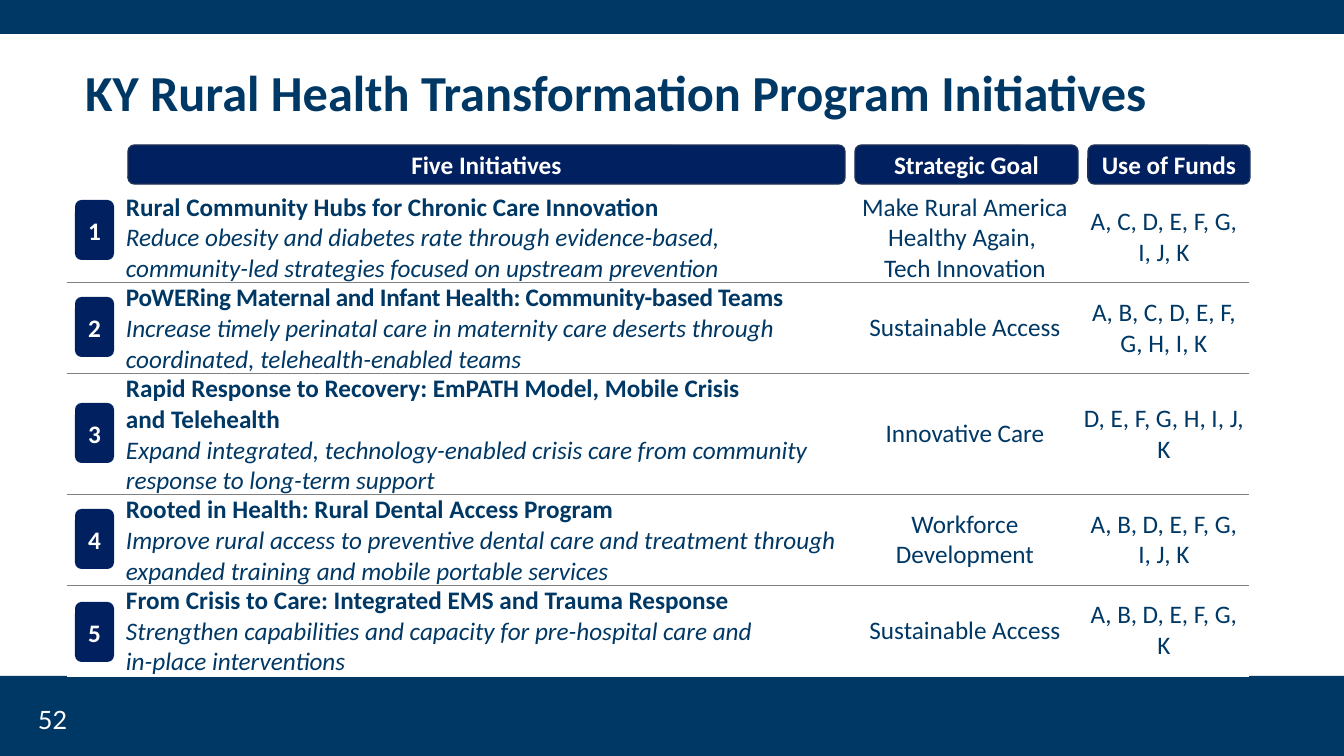
from lxml import etree
from pptx import Presentation
from pptx.dml.color import RGBColor
from pptx.enum.shapes import MSO_SHAPE as Shape
from pptx.enum.text import MSO_ANCHOR as Anchor, MSO_AUTO_SIZE as AutoSize, PP_ALIGN as Align
from pptx.oxml import parse_xml
from pptx.oxml.ns import nsdecls, qn
from pptx.util import Emu, Pt

COLORS = {"band": "003865", "navy": "002060", "edge": "1E3256", "rule": "808080", "white": "FFFFFF"}
NO_STYLE = "{2D5ABB26-0587-4C30-8999-92F81FD0307C}"
COLUMNS = [56, 728, 228, 170]
HEADERS = [("Five Initiatives", 128, 717), ("Strategic Goal", 855, 223), ("Use of Funds", 1088, 162)]
INITIATIVES = [
    ("Rural Community Hubs for Chronic Care Innovation",
     "Reduce obesity and diabetes rate through evidence-based, \ncommunity-led strategies focused on upstream prevention",
     "Make Rural America Healthy Again, \nTech Innovation", "A, C, D, E, F, G, I, J, K", 84, 200),
    ("PoWERing Maternal and Infant Health: Community-based Teams",
     "Increase timely perinatal care in maternity care deserts through coordinated, telehealth-enabled teams",
     "Sustainable Access", "A, B, C, D, E, F, G, H, I, K", 84, 297),
    ("Rapid Response to Recovery: EmPATH Model, Mobile Crisis\nand Telehealth",
     "Expand integrated, technology-enabled crisis care from community response to long-term support",
     "Innovative Care", "D, E, F, G, H, I, J, K", 111, 403),
    ("Rooted in Health: Rural Dental Access Program",
     "Improve rural access to preventive dental care and treatment through expanded training and mobile portable services",
     "Workforce Development", "A, B, D, E, F, G, I, J, K", 84, 509),
    ("From Crisis to Care: Integrated EMS and Trauma Response",
     "Strengthen capabilities and capacity for pre-hospital care and\nin-place interventions",
     "Sustainable Access", "A, B, D, E, F, G, K", 84, 602),
]


def px(length):
    return Emu(round(length * 914400 / 100.8))


def rgb(name):
    return RGBColor.from_string(COLORS[name])


def write(para, text, size=18, font="Calibri", color="band", bold=False, italic=False,
          align=Align.LEFT, tracking=0):
    para.text = text
    para.alignment = align
    for span in para.runs:
        span.font.size = Pt(size)
        span.font.name = font
        span.font.bold = bold
        span.font.italic = italic
        span.font.color.rgb = rgb(color)
        if tracking:
            span._r.get_or_add_rPr().set("spc", str(tracking))


def add_block(page, kind, box, fill, line=None, text=None):
    block = page.shapes.add_shape(kind, *map(px, box))
    block.shadow.inherit = False
    block.fill.solid()
    block.fill.fore_color.rgb = rgb(fill)
    if line:
        block.line.color.rgb = rgb(line)
        block.line.width = Pt(1)
    else:
        block.line.fill.background()
    if text:
        frame = block.text_frame
        frame.margin_left = frame.margin_right = frame.margin_top = frame.margin_bottom = 0
        frame.vertical_anchor = Anchor.MIDDLE
        write(frame.paragraphs[0], text, color="white", bold=True, align=Align.CENTER)


def add_bands(page, width, height):
    add_block(page, Shape.RECTANGLE, (0, height - 80, width, 80), "band")
    add_block(page, Shape.RECTANGLE, (0, 0, width, 34), "band")
    number = page.shapes.add_textbox(px(28), px(height - 57), px(302), px(40))
    number.text_frame.word_wrap = True
    write(number.text_frame.paragraphs[0], "52", font="Lato", color="white")


def place_title(page, box, text):
    title = page.shapes.title
    title.left, title.top, title.width, title.height = map(px, box)
    frame = title.text_frame
    frame.word_wrap = True
    frame.auto_size = AutoSize.NONE
    frame.vertical_anchor = Anchor.MIDDLE
    write(frame.paragraphs[0], text, size=36, bold=True)
    frame.paragraphs[0].line_spacing = 0.9


def add_rule(cell, side, color, points):
    line = parse_xml(f'<a:{side} {nsdecls("a")} w="{Pt(points)}"/>')
    fill = etree.SubElement(line, qn("a:solidFill"))
    etree.SubElement(fill, qn("a:srgbClr")).set("val", COLORS[color])
    cell._tc.get_or_add_tcPr().insert(0, line)


def prepare_cell(cell, first, last):
    cell.margin_left = cell.margin_right = px(3)
    cell.margin_top = cell.margin_bottom = 0
    cell.vertical_anchor = Anchor.MIDDLE
    cell.fill.background()
    add_rule(cell, "lnB", *(("white", 2.25) if last else ("rule", 1)))
    if not first:
        add_rule(cell, "lnT", "rule", 1)


def add_initiatives(page, box):
    holder = page.shapes.add_table(len(INITIATIVES), len(COLUMNS), *map(px, box))
    table = holder.table
    table.first_row = table.horz_banding = False
    table._tbl.tblPr.find(qn("a:tableStyleId")).text = NO_STYLE
    for column, width in zip(table.columns, COLUMNS):
        column.width = px(width)
    for index, (name, aim, goal, funds, height, badge_top) in enumerate(INITIATIVES):
        row = table.rows[index]
        row.height = px(height)
        for cell in row.cells:
            prepare_cell(cell, index == 0, index == len(INITIATIVES) - 1)
        frame = row.cells[1].text_frame
        write(frame.paragraphs[0], name, bold=True, tracking=-20 if index == 1 else 0)
        write(frame.add_paragraph(), aim, italic=True)
        for column, text in ((2, goal), (3, funds)):
            write(row.cells[column].text_frame.paragraphs[0], text, align=Align.CENTER)
        add_block(page, Shape.ROUNDED_RECTANGLE, (box[0] + 8, badge_top, 39, 60), "navy",
                  text=str(index + 1))
    holder.height = px(box[3])


def add_headers(page, top):
    for text, left, width in HEADERS:
        add_block(page, Shape.ROUNDED_RECTANGLE, (left, top, width, 39), "navy", "edge", text)


def main():
    deck = Presentation()
    deck.slide_width, deck.slide_height = px(1344), px(756)
    page = deck.slides.add_slide(deck.slide_layouts[5])
    add_bands(page, 1344, 756)
    place_title(page, (75, 22, 1159, 146), "KY Rural Health Transformation Program Initiatives")
    add_initiatives(page, (67, 192, 1182, 484))
    add_headers(page, 145)
    deck.save("out.pptx")


if __name__ == "__main__":
    main()
